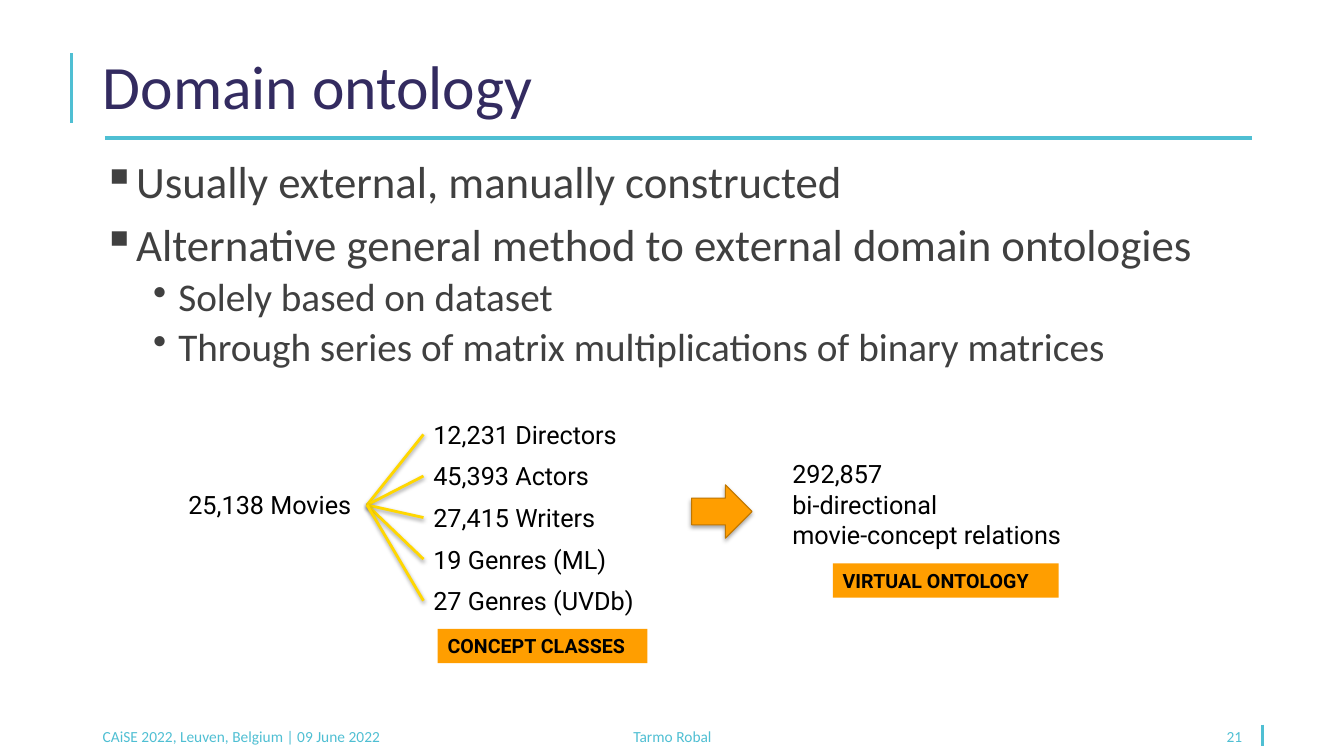
from dataclasses import dataclass

from lxml import etree
from pptx import Presentation
from pptx.dml.color import RGBColor as Rgb
from pptx.enum.shapes import MSO_CONNECTOR as Conn, MSO_SHAPE as Geo
from pptx.enum.text import MSO_ANCHOR as Anchor, PP_ALIGN as Align
from pptx.oxml.ns import qn
from pptx.util import Inches, Pt


@dataclass(frozen=True)
class Theme:
    head: str = "Calibri"
    data: str = "Roboto"
    navy: str = "332B60"
    gray: str = "404040"
    teal: str = "4FBFD3"
    gold: str = "FFD700"
    amber: str = "FF9E00"
    rust: str = "BF7600"
    black: str = "000000"
    title: int = 44
    body: int = 32
    sub: int = 28
    fact: int = 18
    tag: int = 14
    foot: int = 11


class Deck:
    def __init__(self, theme):
        self.theme = theme
        self.file = Presentation()
        self.file.slide_width = Inches(13.33)
        self.file.slide_height = Inches(7.5)
        self.slide = self.file.slides.add_slide(self.file.slide_layouts[6])

    def add_run(self, para, text, font, size, color, bold=False):
        run = para.add_run()
        run.text = text
        run.font.name = font
        run.font.size = Pt(size)
        run.font.bold = bold
        run.font.color.rgb = Rgb.from_string(color)

    def text(self, box, lines, font, size, color, align=Align.LEFT,
             anchor=Anchor.TOP, space=None):
        item = self.slide.shapes.add_textbox(*map(Inches, box))
        frame = item.text_frame
        frame.word_wrap = True
        frame.vertical_anchor = anchor
        for i, line in enumerate(lines):
            para = frame.add_paragraph() if i else frame.paragraphs[0]
            para.alignment = align
            para.line_spacing = space
            self.add_run(para, line, font, size, color)
        return item

    def fact(self, box, *lines):
        return self.text(box, lines, self.theme.data, self.theme.fact, self.theme.black)

    def foot(self, left, width, line, align):
        self.text((left, 7.19, width, 0.23), [line], self.theme.head,
                  self.theme.foot, self.theme.teal, align, Anchor.MIDDLE)

    def list(self, box, items):
        """Add a bulleted list from (level, text) pairs."""
        frame = self.slide.shapes.add_textbox(*map(Inches, box)).text_frame
        frame.word_wrap = True
        for i, (level, line) in enumerate(items):
            para = frame.add_paragraph() if i else frame.paragraphs[0]
            para.level = level
            para.line_spacing = 0.9
            para.space_before = Pt(5 if level else 10)
            props = para._p.get_or_add_pPr()
            props.set("marL", str(Inches(0.75 if level else 0.25)))
            props.set("indent", str(Inches(-0.25)))
            mark = etree.SubElement(props, qn("a:buChar"))
            mark.set("char", "•" if level else "▪")
            size = self.theme.sub if level else self.theme.body
            self.add_run(para, line, self.theme.head, size, self.theme.gray)

    def shade(self, item, alpha=0, drop=0):
        """Set the shadow below an item; with no alpha, remove it."""
        props = item._element.spPr
        for old in props.findall(qn("a:effectLst")):
            props.remove(old)
        effect = etree.SubElement(props, qn("a:effectLst"))
        if alpha:
            cast = etree.SubElement(effect, qn("a:outerShdw"), blurRad=str(Pt(3.1)),
                                    dist=str(Pt(drop)), dir="5400000", rotWithShape="0")
            tint = etree.SubElement(cast, qn("a:srgbClr"), val=self.theme.black)
            etree.SubElement(tint, qn("a:alpha"), val=str(alpha * 1000))

    def line(self, start, end, color, width):
        item = self.slide.shapes.add_connector(Conn.STRAIGHT, *map(Inches, start + end))
        item.line.color.rgb = Rgb.from_string(color)
        item.line.width = Pt(width)
        self.shade(item)
        return item

    def link(self, left, right):
        item = self.line((0, 0), (1, 1), self.theme.gold, 2)
        item.begin_connect(left, 3)
        item.end_connect(right, 1)
        self.shade(item, 38, 1.6)

    def shape(self, kind, box):
        item = self.slide.shapes.add_shape(kind, *map(Inches, box))
        item.shadow.inherit = False
        item.fill.solid()
        item.fill.fore_color.rgb = Rgb.from_string(self.theme.amber)
        item.line.fill.background()
        return item

    def arrow(self, box):
        item = self.shape(Geo.RIGHT_ARROW, box)
        item.line.color.rgb = Rgb.from_string(self.theme.rust)
        item.line.width = Pt(0.75)
        self.shade(item, 35, 1.8)

    def tag(self, box, line):
        frame = self.shape(Geo.RECTANGLE, box).text_frame
        frame.word_wrap = True
        para = frame.paragraphs[0]
        para.alignment = Align.LEFT
        self.add_run(para, line, self.theme.data, self.theme.tag, self.theme.black, True)


def main():
    theme = Theme()
    deck = Deck(theme)

    for start, end in (((0.71, 0.53), (0.71, 1.22)),
                       ((12.52, 7.19), (12.52, 7.4)),
                       ((1.04, 1.37), (12.42, 1.37))):
        deck.line(start, end, theme.teal, 2.25)

    deck.text((0.92, 0.4, 11.5, 0.97), ["Domain ontology"], theme.head,
              theme.title, theme.navy, anchor=Anchor.MIDDLE, space=0.9)
    deck.list((0.92, 1.54, 11.5, 5.53), (
        (0, "Usually external, manually constructed"),
        (0, "Alternative general method to external domain ontologies"),
        (1, "Solely based on dataset"),
        (1, "Through series of matrix multiplications of binary matrices"),
    ))

    movies = deck.fact((1.77, 4.81, 1.87, 0.4), "25,138 Movies")
    classes = ("12,231 Directors", "45,393 Actors", "27,415 Writers",
               "19 Genres (ML)", "27 Genres (UVDb)")
    gap = (5.76 - 4.11) / (len(classes) - 1)
    for i, name in enumerate(classes):
        deck.link(movies, deck.fact((4.2, 4.11 + i * gap, 2.36, 0.4), name))
    deck.tag((4.34, 6.24, 2.08, 0.34), "CONCEPT CLASSES")

    deck.arrow((6.86, 4.81, 0.6, 0.53))
    deck.fact((7.76, 4.5, 3.09, 1.01),
              "292,857", "bi-directional", "movie-concept relations")
    deck.tag((8.26, 5.59, 2.24, 0.34), "VIRTUAL ONTOLOGY")

    deck.foot(0.92, 3.31, "CAiSE 2022, Leuven, Belgium | 09 June 2022", Align.LEFT)
    deck.foot(4.42, 4.5, "Tarmo Robal", Align.CENTER)
    deck.foot(9.42, 3, "21", Align.RIGHT)

    deck.file.save("out.pptx")


if __name__ == "__main__":
    main()
